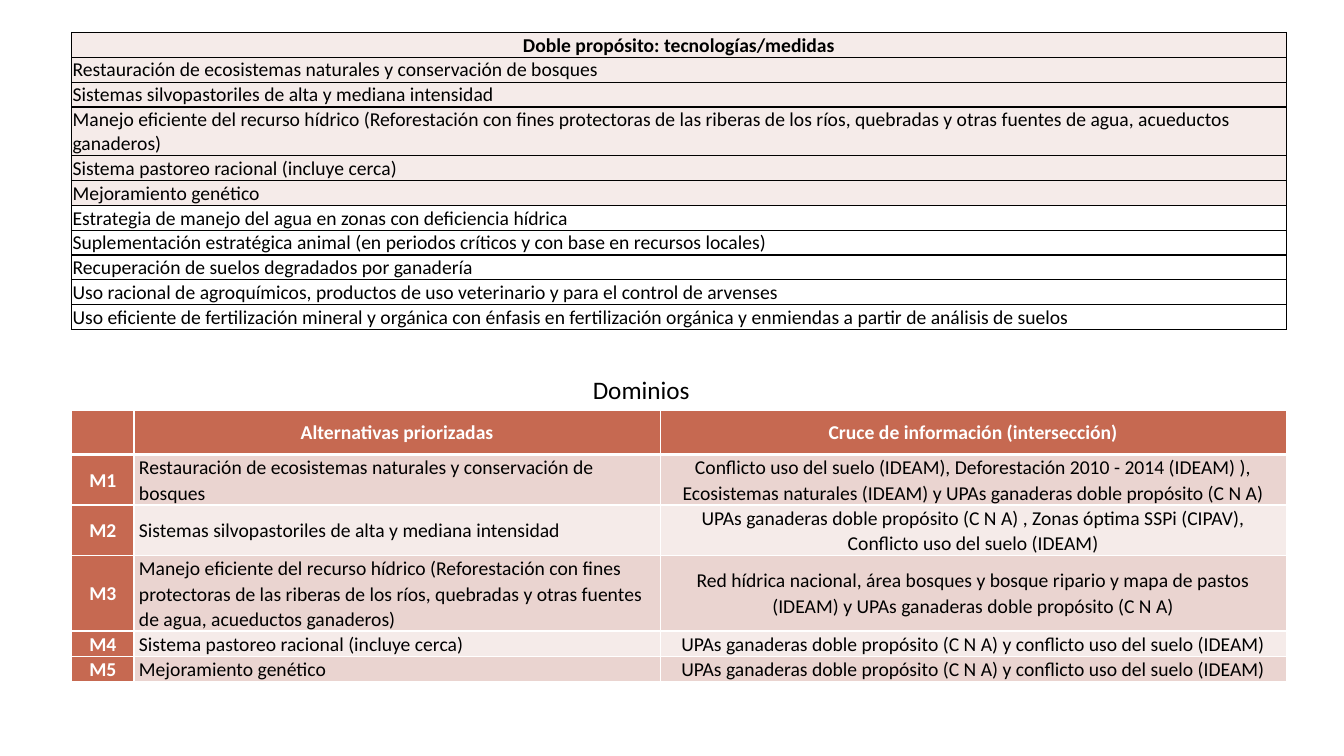
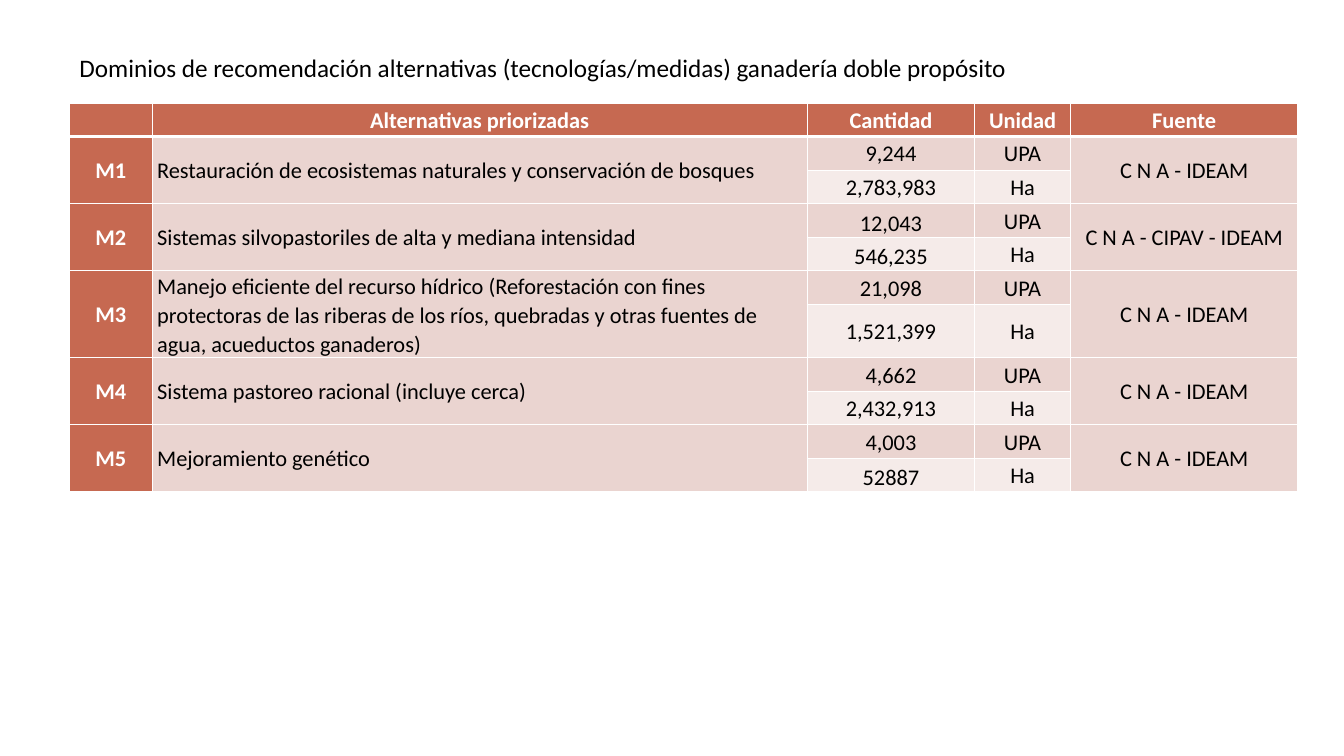
"""Builds two slides of tables on dual-purpose cattle farming measures."""
from lxml import etree
from pptx import Presentation
from pptx.dml import color
from pptx.enum import text
from pptx.oxml import ns
from pptx.util import Pt

COLORS = {
    "black": "000000",
    "white": "FFFFFF",
    "header": "C66951",
    "band": "EAD4D0",
    "pale": "F5EBE9",
}
FONT = "Calibri"
CENTER, LEFT = text.PP_ALIGN.CENTER, text.PP_ALIGN.LEFT
MIDDLE, BOTTOM = text.MSO_ANCHOR.MIDDLE, text.MSO_ANCHOR.BOTTOM

PRIORITIZED = [
    "Restauración de ecosistemas naturales y conservación de bosques",
    "Sistemas silvopastoriles de alta y mediana intensidad",
    "Manejo eficiente del recurso hídrico (Reforestación con fines protectoras de las riberas "
    "de los ríos, quebradas y otras fuentes de agua, acueductos ganaderos)",
    "Sistema pastoreo racional (incluye cerca)",
    "Mejoramiento genético",
]
OTHER_MEASURES = [
    "Estrategia de manejo del agua en zonas con deficiencia hídrica",
    "Suplementación estratégica animal (en periodos críticos y con base en recursos locales)",
    "Recuperación de suelos degradados por ganadería",
    "Uso racional de agroquímicos, productos de uso veterinario y para el control de arvenses",
    "Uso eficiente de fertilización mineral y orgánica con énfasis en fertilización orgánica "
    "y enmiendas a partir de análisis de suelos",
]
INTERSECTIONS = [
    "Conflicto uso del suelo (IDEAM), Deforestación 2010 - 2014 (IDEAM) ), "
    "Ecosistemas naturales (IDEAM) y UPAs ganaderas doble propósito (C N A)",
    "UPAs ganaderas doble propósito (C N A) , Zonas óptima SSPi (CIPAV), "
    "Conflicto uso del suelo (IDEAM)",
    "Red hídrica nacional, área bosques y bosque ripario y mapa de pastos (IDEAM) "
    "y UPAs ganaderas doble propósito (C N A)",
    "UPAs ganaderas doble propósito (C N A) y conflicto uso del suelo (IDEAM)",
    "UPAs ganaderas doble propósito (C N A) y conflicto uso del suelo (IDEAM)",
]
QUANTITIES = [
    ("9,244", "2,783,983"),
    ("12,043", "546,235"),
    ("21,098", "1,521,399"),
    ("4,662", "2,432,913"),
    ("4,003", "52887"),
]
LOW_QUANTITIES = {"12,043", "546,235", "52887"}
SOURCES = ["C N A - IDEAM", "C N A - CIPAV - IDEAM"] + ["C N A - IDEAM"] * 3


class Deck:
    def __init__(self):
        self.prs = Presentation()
        self.prs.slide_width, self.prs.slide_height = Pt(960), Pt(540)
        self.slide = None

    def new_slide(self):
        self.slide = self.prs.slides.add_slide(self.prs.slide_layouts[6])

    def style(self, paragraph, size, ink="black", bold=False, align=LEFT, spacing=1.0):
        paragraph.alignment = align
        paragraph.line_spacing = spacing
        font = paragraph.font
        font.name, font.size, font.bold = FONT, Pt(size), bold
        font.color.rgb = color.RGBColor.from_string(COLORS[ink])

    def title(self, left, top, width, words, align=LEFT):
        frame = self.slide.shapes.add_textbox(Pt(left), Pt(top), Pt(width), Pt(29)).text_frame
        frame.word_wrap = True
        frame.text = words
        self.style(frame.paragraphs[0], 18, align=align)

    def table(self, left, top, widths, heights):
        grid = self.slide.shapes.add_table(
            len(heights), len(widths), Pt(left), Pt(top), Pt(sum(widths)), Pt(sum(heights))
        ).table
        grid.first_row = grid.horz_banding = False
        for column, width in zip(grid.columns, widths):
            column.width = Pt(width)
        for row, height in zip(grid.rows, heights):
            row.height = Pt(height)
        return grid

    def borders(self, cell, ink, **widths):
        properties = cell._tc.get_or_add_tcPr()
        for side in "LRTB":
            line = etree.SubElement(properties, ns.qn(f"a:ln{side}"), w=str(Pt(widths.get(side, 1))))
            fill = etree.SubElement(line, ns.qn("a:solidFill"))
            etree.SubElement(fill, ns.qn("a:srgbClr"), val=COLORS[ink])

    def cell(self, cell, words, size, fill=None, insets=(3.6, 0, 3.6, 0), anchor=MIDDLE, **look):
        cell.margin_left, cell.margin_top, cell.margin_right, cell.margin_bottom = map(Pt, insets)
        cell.vertical_anchor = anchor
        if fill:
            cell.fill.solid()
            cell.fill.fore_color.rgb = color.RGBColor.from_string(COLORS[fill])
        else:
            cell.fill.background()
        cell.text = words
        self.style(cell.text_frame.paragraphs[0], size, **look)

    def list_table(self, left, top, width, heading, groups):
        rows = [(heading, "pale")] + [(item, fill) for items, fill in groups for item in items]
        heights = [34.7 if len(words) > 140 else 17.6 for words, _ in rows]
        grid = self.table(left, top, [width], heights)
        for index, (words, fill) in enumerate(rows):
            cell = grid.cell(index, 0)
            self.borders(cell, "black")
            self.cell(cell, words, 14, fill, (0.7, 0.7, 0.7, 0),
                      bold=index == 0, align=LEFT if index else CENTER)

    def banded_table(self, left, top, widths, heights, rows, size, group=1):
        grid = self.table(left, top, widths, heights)
        for r, row in enumerate(rows):
            for c, words in enumerate(row):
                cell = grid.cell(r, c)
                accent = r == 0 or c == 0
                merged = group > 1 and c in (0, 1, len(row) - 1)
                band = "band" if r % 2 or merged else "pale"
                self.borders(cell, "white", T=3 if r == 1 else 1, B=1 if r else 3)
                self.cell(
                    cell, words, size, "header" if accent else band,
                    anchor=BOTTOM if words in LOW_QUANTITIES else MIDDLE,
                    ink="white" if accent else "black", bold=accent,
                    align=LEFT if c == 1 and r else CENTER, spacing=1.07,
                )
                if merged and r and r % group == 0:
                    grid.cell(r - group + 1, c).merge(cell)


def main():
    deck = Deck()
    codes = [f"M{number}" for number in range(1, len(PRIORITIZED) + 1)]

    deck.new_slide()
    deck.list_table(51.2, 23.2, 867.5, "Doble propósito: tecnologías/medidas",
                    [(PRIORITIZED, "pale"), (OTHER_MEASURES, None)])
    deck.title(218, 264, 480, "Dominios", CENTER)
    domains = [("", "Alternativas priorizadas", "Cruce de información (intersección)")]
    domains += zip(codes, PRIORITIZED, INTERSECTIONS)
    deck.banded_table(51.2, 293, [44.5, 376, 447], [31.7, 36, 36, 54, 18, 18], domains, 14)

    deck.new_slide()
    amounts = [("", "Alternativas priorizadas", "Cantidad", "Unidad", "Fuente")]
    for code, measure, (farms, hectares), source in zip(codes, PRIORITIZED, QUANTITIES, SOURCES):
        amounts.append((code, measure, farms, "UPA", source))
        amounts.append(("", "", hectares, "Ha", ""))
    heights = [38 if "1,521,399" in row else 24 for row in amounts]
    deck.banded_table(49.7, 73.6, [59, 468, 119.5, 68.5, 162.5], heights, amounts, 16, group=2)
    deck.title(49.7, 34, 877.5, "Dominios de recomendación alternativas (tecnologías/medidas) "
               "ganadería doble propósito")

    deck.prs.save("out.pptx")


if __name__ == "__main__":
    main()
